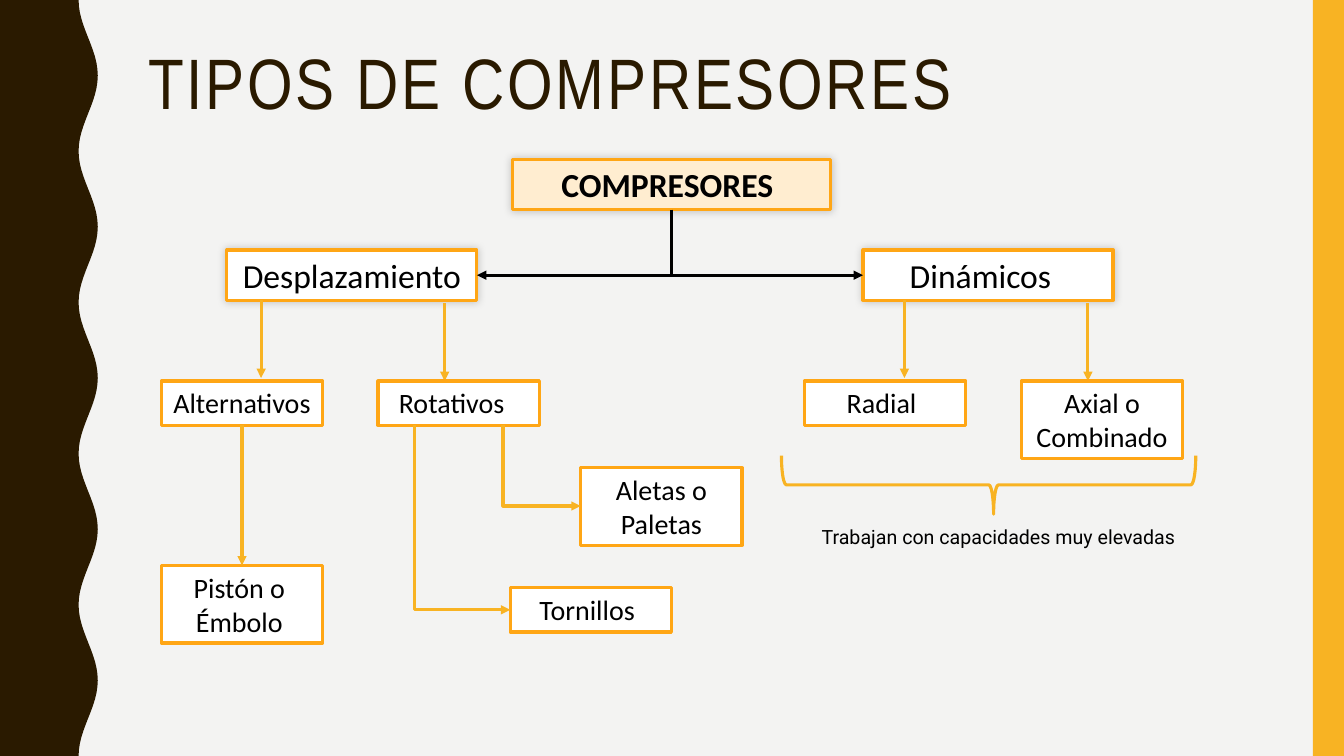
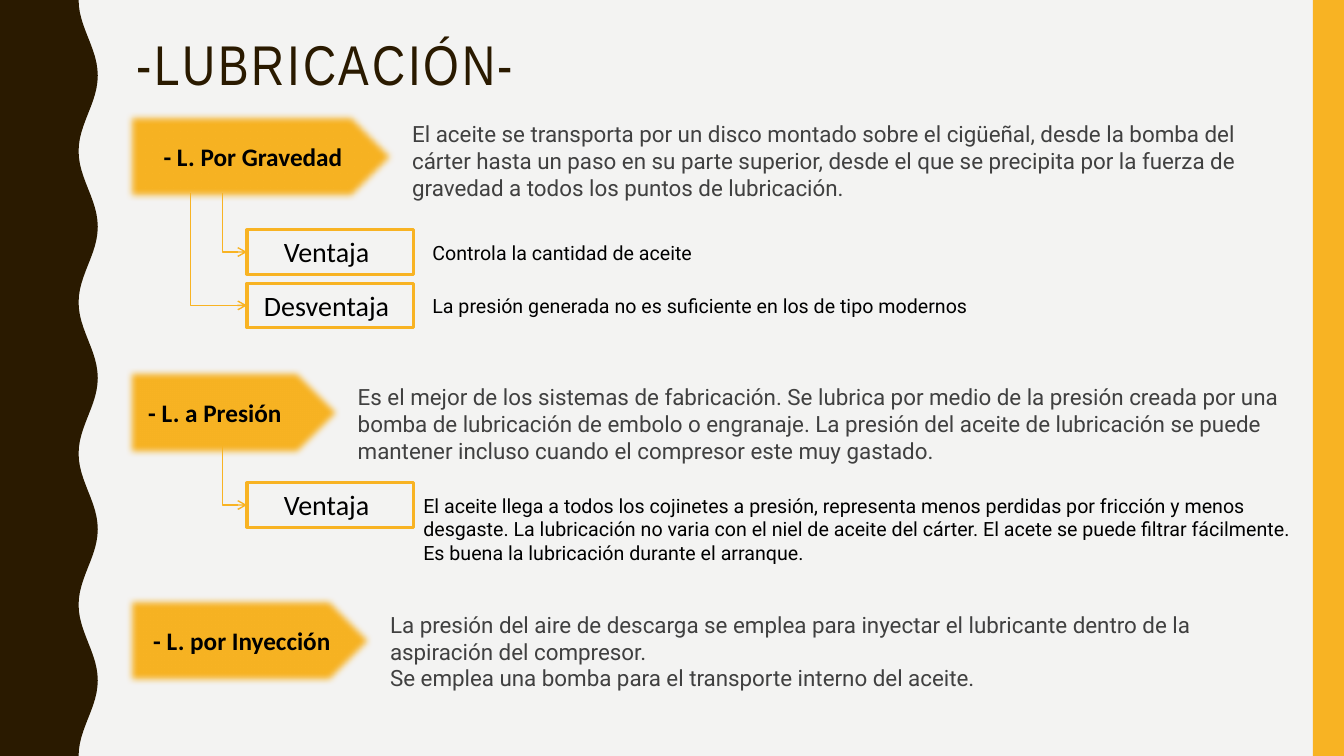
from dataclasses import dataclass
from math import cos, pi

from lxml.etree import SubElement
from pptx import Presentation
from pptx.dml.color import RGBColor
from pptx.enum.shapes import MSO_CONNECTOR, MSO_SHAPE
from pptx.enum.text import MSO_ANCHOR, MSO_AUTO_SIZE, PP_ALIGN
from pptx.oxml.ns import qn
from pptx.util import Inches, Pt


@dataclass(frozen=True)
class Theme:
    # Colours
    background: str = "F3F3F2"
    dark: str = "2A1A00"
    amber: str = "F8B323"
    border: str = "FFA615"
    highlight: str = "FFEDD0"
    white: str = "FFFFFF"
    black: str = "000000"
    grey: str = "404040"
    # Fonts
    title_font: str = "Arial Narrow"
    label_font: str = "Calibri"
    body_font: str = "Roboto"
    # Type sizes and line widths in points
    title_size: int = 51
    small_title_size: int = 40
    branch_size: int = 24
    label_size: int = 20
    tag_size: int = 18
    body_size: int = 16
    note_size: int = 14
    thick: float = 2.25
    thin: float = 1
    hairline: float = 0.5


THEME = Theme()
SLIDE_WIDTH, SLIDE_HEIGHT = 13.33, 7.5
TEXT_RIGHT = 12.92


# Shared helpers
def inches(*lengths):
    return [Inches(length) for length in lengths]


def color(code):
    return RGBColor.from_string(code)


def write(shape, text, *, size, font=THEME.label_font, ink=THEME.black, bold=False,
          align=PP_ALIGN.LEFT, anchor=MSO_ANCHOR.TOP, left=0.1, right=0.1,
          line_spacing=None, tracking=None):
    """Fill a shape with text; each line of the string is one paragraph."""
    frame = shape.text_frame
    frame.word_wrap = True
    frame.auto_size = MSO_AUTO_SIZE.NONE
    frame.vertical_anchor = anchor
    frame.margin_left, frame.margin_right = inches(left, right)
    frame.margin_top = frame.margin_bottom = Inches(0.05)
    for index, line in enumerate(text.split("\n")):
        paragraph = frame.add_paragraph() if index else frame.paragraphs[0]
        paragraph.alignment = align
        if line_spacing:
            paragraph.line_spacing = line_spacing
        run = paragraph.add_run()
        run.text = line
        run.font.name, run.font.size, run.font.bold = font, Pt(size), bold
        run.font.color.rgb = color(ink)
        if tracking:
            run._r.get_or_add_rPr().set("spc", str(tracking * 100))


def add_text(slide, box, text, **text_format):
    shape = slide.shapes.add_textbox(*inches(*box))
    write(shape, text, **text_format)
    return shape


def paint(shape, fill=None, line=None, width=THEME.thick):
    shape.shadow.inherit = False
    if fill:
        shape.fill.solid()
        shape.fill.fore_color.rgb = color(fill)
    else:
        shape.fill.background()
    if line:
        shape.line.color.rgb = color(line)
        shape.line.width = Pt(width)
    else:
        shape.line.fill.background()


def add_shape(slide, preset, box, **paint_format):
    shape = slide.shapes.add_shape(preset, *inches(*box))
    paint(shape, **paint_format)
    return shape


def add_effect(shape, name, **attributes):
    effects = shape.element.spPr.find(qn("a:effectLst"))
    return SubElement(effects, qn(f"a:{name}"), attributes)


def add_glow_shadow(shape):
    shadow = add_effect(shape, "outerShdw", blurRad=str(Pt(6)), dist="0", dir="0")
    tint = SubElement(shadow, qn("a:srgbClr"), val=THEME.black)
    SubElement(tint, qn("a:alpha"), val="20000")


def add_label(slide, box, text, *, fill=THEME.white, line=THEME.border,
              size=THEME.label_size, **text_format):
    shape = add_shape(slide, MSO_SHAPE.RECTANGLE, box, fill=fill, line=line)
    write(shape, text, size=size, align=PP_ALIGN.CENTER, **text_format)
    return shape


def style_connector(connector, ink, width, head=None, tail=None):
    connector.line.color.rgb = color(ink)
    connector.line.width = Pt(width)
    line = connector.line._get_or_add_ln()
    for end, kind in (("headEnd", head), ("tailEnd", tail)):
        if kind:
            SubElement(line, qn(f"a:{end}"), type=kind)
    SubElement(connector.element.spPr, qn("a:effectLst"))


def add_line(slide, start, end, *, ink=THEME.amber, width=THEME.thick,
             head=None, tail=None, begin_at=None, end_at=None):
    """Straight line; begin_at and end_at are (shape, side) joints."""
    connector = slide.shapes.add_connector(
        MSO_CONNECTOR.STRAIGHT, *inches(*start, *end))
    style_connector(connector, ink, width, head, tail)
    if begin_at:
        connector.begin_connect(*begin_at)
    if end_at:
        connector.end_connect(*end_at)


def add_elbow(slide, start, end, *, width=THEME.thick, tail="triangle"):
    """Arrow that runs down, then right: a one-bend connector turned by 270°."""
    across, down = end[0] - start[0], end[1] - start[1]
    middle_x, middle_y = start[0] + across / 2, start[1] + down / 2
    connector = slide.shapes.add_connector(
        MSO_CONNECTOR.ELBOW,
        *inches(middle_x - down / 2, middle_y - across / 2,
                middle_x + down / 2, middle_y + across / 2))
    properties = connector.element.spPr
    properties.find(qn("a:prstGeom")).set("prst", "bentConnector2")
    frame = properties.find(qn("a:xfrm"))
    frame.set("rot", "16200000")
    frame.set("flipH", "1")
    style_connector(connector, THEME.amber, width, tail=tail)


# Master: background, wavy band and side bar
def decorate_master(presentation, slide):
    master = presentation.slide_master
    master.background.fill.solid()
    master.background.fill.fore_color.rgb = color(THEME.background)

    steps, waves = 120, 5
    edge = []
    for step in range(steps + 1):
        swing = 0.095 * cos(2 * pi * waves * step / steps)
        edge.append(tuple(inches(0.875 - swing, SLIDE_HEIGHT * step / steps)))
    builder = slide.shapes.build_freeform(0, 0, scale=1.0)
    builder.add_line_segments(edge + [(0, Inches(SLIDE_HEIGHT))], close=True)
    band = builder.convert_to_shape()
    paint(band, fill=THEME.dark)
    bar = add_shape(slide, MSO_SHAPE.RECTANGLE,
                    (13.02, 0, 0.31, SLIDE_HEIGHT), fill=THEME.amber)
    for position, shape in enumerate((band, bar), start=2):
        master.shapes.element.insert(position, shape.element)


def set_title(slide, box, text, size):
    title = slide.shapes.title
    title.left, title.top, title.width, title.height = inches(*box)
    write(title, text, size=size, font=THEME.title_font, ink=THEME.dark,
          line_spacing=0.9, tracking=2)


# Slide 1: tree of compressor types
NODE_WIDTH, NODE_HEIGHT, TALL_NODE_HEIGHT = 1.6, 0.44, 0.77


def add_node(slide, left, top, text, tall=False, **text_format):
    height = TALL_NODE_HEIGHT if tall else NODE_HEIGHT
    return add_label(slide, (left, top, NODE_WIDTH, height), text, **text_format)


def add_branch(slide, box, text, children_left, children, **text_format):
    """Branch box with two child nodes below; returns all three."""
    left, top, width, height = box
    branch = add_label(slide, box, text, size=THEME.branch_size, **text_format)
    add_glow_shadow(branch)
    nodes = []
    for index, child in enumerate(children):
        arrow_x = children_left + 0.99 + 1.82 * index
        arrow_top = top + height + 0.03 * index
        add_line(slide, (arrow_x, arrow_top), (arrow_x, arrow_top + 0.77),
                 tail="triangle")
        nodes.append(add_node(slide, children_left + 2.15 * index, top + 1.3, **child))
    return branch, *nodes


def add_capacity_note(slide, box):
    left, top, width, height = box
    # The brace is drawn upright and turned around its centre
    brace_depth = 0.58
    brace = add_shape(
        slide, MSO_SHAPE.RIGHT_BRACE,
        (left + (width - brace_depth) / 2, top + (brace_depth - width) / 2,
         brace_depth, width), line=THEME.amber)
    brace.rotation = 90
    brace.adjustments[0], brace.adjustments[1] = 0.083, 0.488
    add_text(slide, (left + 0.3, top + 0.64, 3.83, 0.34),
             "Trabajan con capacidades muy elevadas",
             size=THEME.note_size, font=THEME.body_font)


def build_types_slide(slide):
    set_title(slide, (1.37, 0.42, 11.13, 1.63), "TIPOS DE COMPRESORES",
              THEME.title_size)
    root = add_label(slide, (5.08, 1.58, 3.16, 0.5), "COMPRESORES",
                     fill=THEME.highlight, size=THEME.branch_size, bold=True, right=0.18)
    add_glow_shadow(root)

    # Two main branches
    displacement, reciprocating, _ = add_branch(
        slide, (2.25, 2.48, 2.48, 0.5), "Desplazamiento", 1.6,
        [dict(text="Alternativos"), dict(text="Rotativos", right=0.24)])
    dynamic, _, _ = add_branch(
        slide, (8.56, 2.48, 2.48, 0.5), "Dinámicos", 7.98,
        [dict(text="Radial", right=0.17), dict(text="Axial o Combinado", tall=True)],
        right=0.25)
    add_line(slide, (4.73, 2.73), (8.56, 2.73), ink=THEME.black,
             head="triangle", tail="triangle",
             begin_at=(displacement, 3), end_at=(dynamic, 1))
    add_line(slide, (6.66, 2.08), (6.66, 2.73), ink=THEME.black, begin_at=(root, 2))

    # Third level
    add_node(slide, 5.76, 4.64, "Aletas o Paletas", tall=True)
    add_node(slide, 5.06, 5.83, "Tornillos", right=0.17)
    add_elbow(slide, (4.99, 4.22), (5.76, 5.02))
    add_elbow(slide, (4.11, 4.22), (5.06, 6.05))
    piston = add_node(slide, 1.6, 5.61, "Pistón o Émbolo", tall=True, right=0.15)
    add_line(slide, (2.4, 4.22), (2.4, 5.61), tail="triangle",
             begin_at=(reciprocating, 2), end_at=(piston, 0))
    add_capacity_note(slide, (7.75, 4.52, 4.11, 0.97))


# Slide 2: kinds of lubrication
def add_lubrication(slide, box, tag, description, *, text_drop=0.1, rows=(),
                    rows_drop=1.17, note_gap=0.09, **tag_format):
    """Arrow tag in the box, its description beside it and its rows below."""
    left, top, width, height = box
    right = left + width
    arrow = add_shape(slide, MSO_SHAPE.PENTAGON, box, fill=THEME.amber,
                      line=THEME.amber, width=THEME.hairline)
    add_effect(arrow, "softEdge", rad=str(Pt(5)))
    write(arrow, tag, size=THEME.tag_size, bold=True, anchor=MSO_ANCHOR.MIDDLE,
          **tag_format)
    add_text(slide, (right, top + text_drop, TEXT_RIGHT - right, 0.91), description,
             size=THEME.body_size, font=THEME.body_font, ink=THEME.grey)

    row_left, row_width, row_height = left + 1.2, 1.65, 0.44
    note_left = row_left + row_width + note_gap
    for index, (name, note) in enumerate(rows):
        row_top = top + rows_drop + 0.53 * index
        add_label(slide, (row_left, row_top, row_width, row_height), name,
                  fill=None, line=THEME.amber, right=0.17)
        add_text(slide, (note_left, row_top + 0.06, TEXT_RIGHT - note_left,
                         0.34 if len(note) < 80 else 0.81), note,
                 size=THEME.note_size, font=THEME.body_font)
        add_elbow(slide, (left + 0.96 - 0.32 * index, top + rows_drop - 0.37),
                  (row_left, row_top + row_height / 2), width=THEME.thin, tail="arrow")


def build_lubrication_slide(slide):
    set_title(slide, (1.25, 0.32, 4.43, 0.45), "-LUBRICACIÓN-", THEME.small_title_size)
    add_lubrication(
        slide, (1.25, 1.11, 2.74, 0.89), "- L. Por Gravedad",
        "El aceite se transporta por un disco montado sobre el cigüeñal, desde la bomba "
        "del cárter hasta un paso en su parte superior, desde el que se precipita por la "
        "fuerza de gravedad a todos los puntos de lubricación.",
        text_drop=0.03, align=PP_ALIGN.CENTER,
        rows=[("Ventaja", "Controla la cantidad de aceite"),
              ("Desventaja",
               "La presión generada no es suficiente en los de tipo modernos")])
    add_lubrication(
        slide, (1.25, 3.65, 2.2, 0.89), "- L. a Presión",
        "Es el mejor de los sistemas de fabricación. Se lubrica por medio de la presión "
        "creada por una bomba de lubricación de embolo o engranaje. La presión del aceite "
        "de lubricación se puede mantener incluso cuando el compresor este muy gastado.",
        left=0.22, rows_drop=1.14, note_gap=0,
        rows=[("Ventaja",
               "El aceite llega a todos los cojinetes a presión, representa menos perdidas "
               "por fricción y menos desgaste. La lubricación no varia con el niel de "
               "aceite del cárter. El acete se puede filtrar fácilmente.\n"
               "Es buena la lubricación durante el arranque.")])
    add_lubrication(
        slide, (1.25, 5.91, 2.52, 0.89), "- L. por Inyección",
        "La presión del aire de descarga se emplea para inyectar el lubricante dentro de "
        "la aspiración del compresor.\n"
        "Se emplea una bomba para el transporte interno del aceite.",
        align=PP_ALIGN.CENTER)


def main():
    presentation = Presentation()
    presentation.slide_width, presentation.slide_height = inches(SLIDE_WIDTH, SLIDE_HEIGHT)
    title_only = presentation.slide_layouts[5]
    types_slide = presentation.slides.add_slide(title_only)
    decorate_master(presentation, types_slide)
    build_types_slide(types_slide)
    build_lubrication_slide(presentation.slides.add_slide(title_only))
    presentation.save("out.pptx")


if __name__ == "__main__":
    main()
